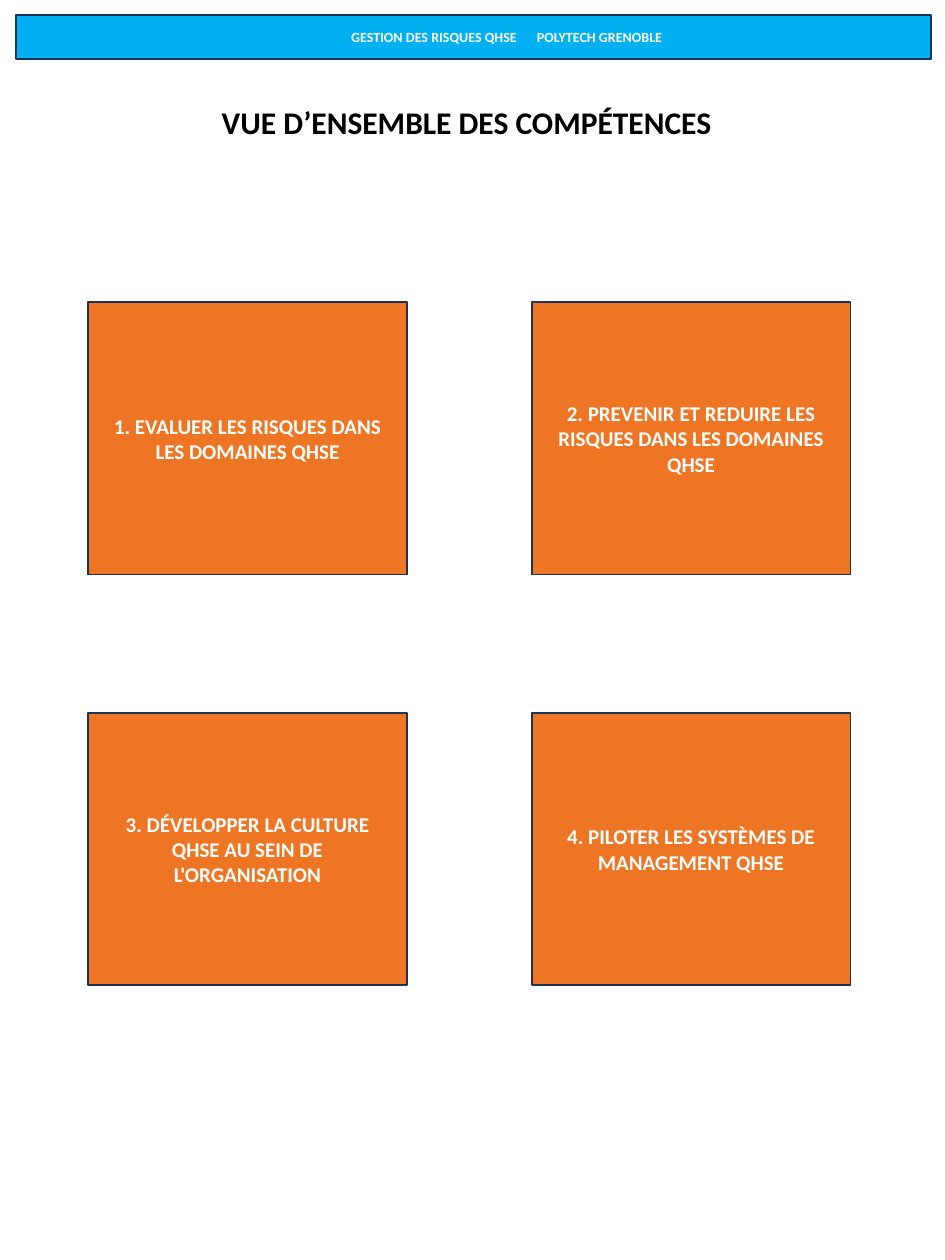
from pptx import Presentation
from pptx.dml.color import RGBColor
from pptx.enum.shapes import MSO_SHAPE
from pptx.enum.text import MSO_ANCHOR, MSO_AUTO_SIZE, PP_ALIGN
from pptx.util import Inches, Pt

HUES = {"band": "00B0F0", "card": "EE7523", "edge": "1E3256",
        "light": "FFFFFF", "dark": "000000"}
HEAD = "\t GESTION DES RISQUES QHSE \tPOLYTECH GRENOBLE"
TITLE = "VUE D’ENSEMBLE DES COMPÉTENCES"
SKILLS = [
    "1. EVALUER LES RISQUES DANS LES DOMAINES QHSE",
    "2. PREVENIR ET REDUIRE LES RISQUES DANS LES DOMAINES QHSE",
    "3. DÉVELOPPER LA CULTURE QHSE AU SEIN DE L'ORGANISATION",
    "4. PILOTER LES SYSTÈMES DE MANAGEMENT QHSE",
]


def write(shape, text, size, hue, align):
    """Put one bold paragraph in a shape and return it."""
    para = shape.text_frame.paragraphs[0]
    para.text = text
    para.alignment = align
    for run in para.runs:
        font = run.font
        font.name, font.size, font.bold = "Calibri", Pt(size), True
        font.color.rgb = RGBColor.from_string(HUES[hue])
    return para


def panel(slide, box, text, size, hue):
    """Draw an edged rectangle with centred text and return its paragraph."""
    shape = slide.shapes.add_shape(MSO_SHAPE.RECTANGLE, *map(Inches, box))
    shape.shadow.inherit = False
    shape.fill.solid()
    shape.fill.fore_color.rgb = RGBColor.from_string(HUES[hue])
    shape.line.color.rgb = RGBColor.from_string(HUES["edge"])
    shape.line.width = Pt(1)
    frame = shape.text_frame
    frame.word_wrap = True
    frame.vertical_anchor = MSO_ANCHOR.MIDDLE
    return write(shape, text, size, "light", PP_ALIGN.CENTER)


def header(slide, box):
    """Draw the top band with its two tabbed labels."""
    para = panel(slide, box, HEAD, 8, "band")
    para._p.get_or_add_pPr().set("defTabSz", str(Inches(0.5)))


def title(slide, box):
    """Place and format the title placeholder."""
    shape = slide.shapes.title
    shape.left, shape.top, shape.width, shape.height = map(Inches, box)
    frame = shape.text_frame
    frame.word_wrap = False
    frame.auto_size = MSO_AUTO_SIZE.SHAPE_TO_FIT_TEXT
    frame.vertical_anchor = MSO_ANCHOR.TOP
    write(shape, TITLE, 18, "dark", PP_ALIGN.LEFT)


def cards(slide, box, wide=2.53, high=2.16, cols=2):
    """Spread the skill cards over a grid that fills the box."""
    left, top, width, height = box
    rows = len(SKILLS) // cols
    step_x = (width - wide) / (cols - 1)
    step_y = (height - high) / (rows - 1)
    for i, text in enumerate(SKILLS):
        row, col = divmod(i, cols)
        cell = (left + col * step_x, top + row * step_y, wide, high)
        panel(slide, cell, text, 12, "card").space_after = Pt(6)


def main():
    """Build and save the slide."""
    deck = Presentation()
    deck.slide_width, deck.slide_height = Inches(7.5), Inches(10)
    slide = deck.slides.add_slide(deck.slide_layouts[5])
    title(slide, (1.66, 0.77, 4.13, 0.4))
    header(slide, (0.13, 0.12, 7.26, 0.35))
    cards(slide, (0.7, 2.4, 6.05, 5.42))
    deck.save("out.pptx")


if __name__ == "__main__":
    main()
